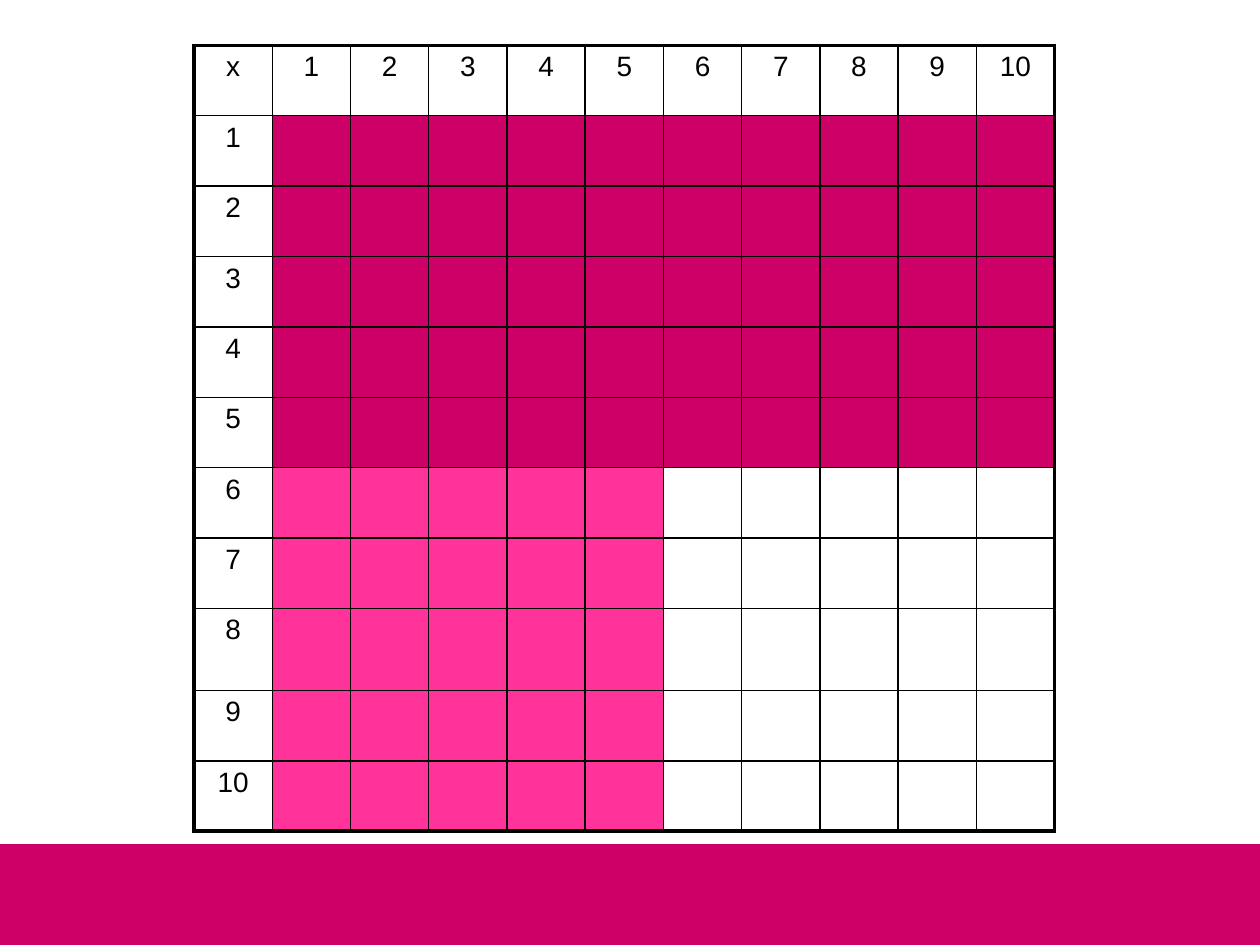
from lxml import etree
from pptx import Presentation
from pptx.dml.color import RGBColor
from pptx.enum.shapes import MSO_SHAPE
from pptx.enum.text import PP_ALIGN
from pptx.oxml.ns import qn
from pptx.util import Inches, Pt

RECT = MSO_SHAPE.RECTANGLE
CENTER = PP_ALIGN.CENTER

BLACK = RGBColor(0x00, 0x00, 0x00)
DARK_PINK = RGBColor(0xCC, 0x00, 0x66)
LIGHT_PINK = RGBColor(0xFF, 0x33, 0x99)

LAST = 10           # highest factor in the grid
HALF = 5            # factors up to here are coloured
THIN, THICK = 1, 2.25
ROW_H, TALL_ROW_H, TALL_ROW = 0.559, 0.65, 8


def write(tf, text, size=16, font="Arial", color=BLACK, align=CENTER):
    p = tf.paragraphs[0]
    p.alignment = align
    r = p.add_run()
    r.text = text
    r.font.size = Pt(size)
    r.font.name = font
    r.font.color.rgb = color


def set_borders(cell, **widths):
    """Draw the cell's sides; keys are L, R, T, B in schema order."""
    tcPr = cell._tc.get_or_add_tcPr()
    for side, width in widths.items():
        ln = etree.SubElement(tcPr, qn(f"a:ln{side}"), w=str(Pt(width)))
        fill = etree.SubElement(ln, qn("a:solidFill"))
        etree.SubElement(fill, qn("a:srgbClr"), val=str(BLACK))


def product_color(row, col):
    """Dark for the upper half, light for the lower left, otherwise none."""
    if row == 0 or col == 0:
        return None
    if row <= HALF:
        return DARK_PINK
    return LIGHT_PINK if col <= HALF else None


def add_multiplication_grid(s, left, top, width, height):
    n = LAST + 1
    table = s.shapes.add_table(n, n, Inches(left), Inches(top),
                               Inches(width), Inches(height)).table
    table.first_row = table.horz_banding = False
    for column in table.columns:
        column.width = Inches(width / n)
    for i, row in enumerate(table.rows):
        row.height = Inches(TALL_ROW_H if i == TALL_ROW else ROW_H)

    for i in range(n):
        for j in range(n):
            cell = table.cell(i, j)
            set_borders(cell,
                        L=THICK if j == 0 else THIN,
                        R=THICK if j == LAST else THIN,
                        T=THICK if i == 0 else THIN,
                        B=THICK if i == LAST else THIN)
            color = product_color(i, j)
            if color is None:
                cell.fill.background()
            else:
                cell.fill.solid()
                cell.fill.fore_color.rgb = color
            if i == 0 or j == 0:
                write(cell.text_frame, str(i + j) if i + j else "x")


def add_footer_band(s, left, top, width, height):
    sp = s.shapes.add_shape(RECT, Inches(left), Inches(top),
                            Inches(width), Inches(height))
    sp.shadow.inherit = False
    sp.fill.solid()
    sp.fill.fore_color.rgb = DARK_PINK
    sp.line.fill.background()


def main():
    prs = Presentation()
    prs.slide_width, prs.slide_height = Inches(10), Inches(7.5)
    s = prs.slides.add_slide(prs.slide_layouts[6])
    add_footer_band(s, 0, 6.7, 10, 0.8)
    add_multiplication_grid(s, 1.54, 0.36, 6.83, 6.24)
    prs.save("out.pptx")


if __name__ == "__main__":
    main()
